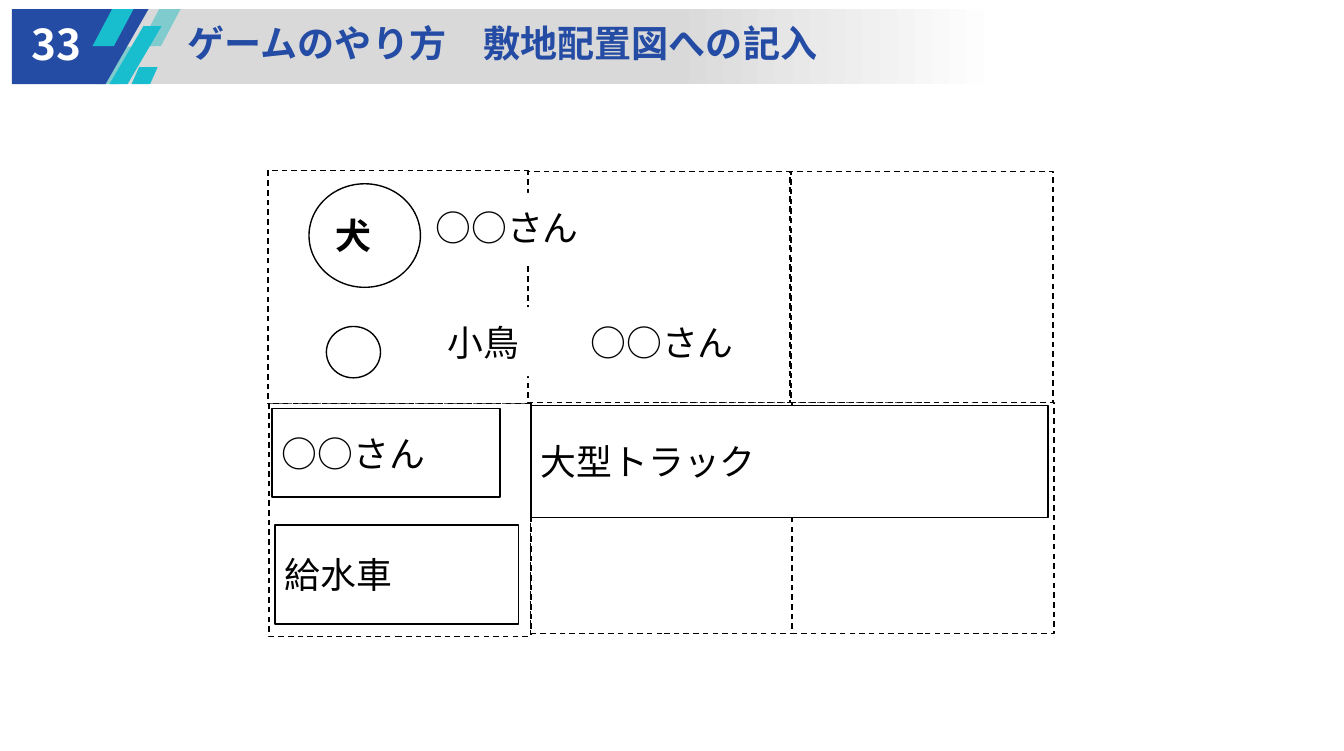
from dataclasses import dataclass
from typing import Any, Optional

from lxml import etree
from pptx import Presentation
from pptx import util as u
from pptx.dml import color as dml_color
from pptx.enum import dml, shapes, text
from pptx.oxml import ns

COLORS = {
    "white": "FFFFFF",
    "black": "000000",
    "grey": "D9D9D9",
    "navy": "254CA4",
    "cyan": "18BDCE",
    "pale_cyan": "80CBCD",
}
CJK_FONT = "Noto Sans CJK JP"
KIND = shapes.MSO_SHAPE
LABEL_FONT = {"name": "Arial", "size": u.Pt(25.7), "bold": False}
DOG_FONT = {**LABEL_FONT, "bold": True}
TITLE_FONT = {"name": CJK_FONT, "size": u.Pt(26.6), "bold": True}
NUMBER_FONT = {"name": CJK_FONT, "size": u.Pt(30.4), "bold": True}
BAND_STOPS = [(1, "grey"), (50, "grey"), (75, "white"), (100, "white")]


@dataclass(frozen=True)
class Box:
    left: float
    top: float
    width: float
    height: float

    def lengths(self) -> list[u.Cm]:
        return [u.Cm(v) for v in (self.left, self.top, self.width, self.height)]


@dataclass(frozen=True)
class Stripe:
    box: Box
    slant: float
    color: str


@dataclass(frozen=True)
class Item:
    box: Box
    words: str = ""
    kind: Any = KIND.RECTANGLE
    outlined: bool = True
    font: Optional[dict] = None


BAND = Box(0.3, 0.23, 33.38, 1.9)
BADGE_OUTLINE = [(0.3, 0.23), (2.67, 0.23), (3.76, 0.23), (2.67, 2.13), (0.3, 2.13)]
BACK_STRIPE = Stripe(Box(2.44, 1.19, 1.04, 0.94), 0.53, "pale_cyan")
FRONT_STRIPES = [
    Stripe(Box(2.34, 0.23, 1.04, 0.94), 0.53, "cyan"),
    Stripe(Box(3.33, 1.7, 0.66, 0.43), 0.442, "cyan"),
    Stripe(Box(3.53, 0.23, 1.04, 0.94), 0.53, "pale_cyan"),
    Stripe(Box(2.77, 0.66, 1.32, 1.47), 0.653, "cyan"),
]
PLOTS = [
    Box(6.78, 4.32, 6.63, 5.89),
    Box(6.81, 10.21, 6.63, 5.89),
    Box(13.44, 10.19, 6.63, 5.84),
    Box(13.36, 4.34, 6.63, 5.84),
    Box(20.04, 10.19, 6.63, 5.84),
    Box(20.02, 4.34, 6.63, 5.84),
]
ITEMS = [
    Item(Box(7.82, 4.65, 2.82, 2.62), "犬", KIND.OVAL, font=DOG_FONT),
    Item(Box(10.77, 4.88, 5.18, 1.75), "○○さん", outlined=False),
    Item(Box(8.26, 8.26, 1.37, 1.3), kind=KIND.OVAL),
    Item(Box(11.07, 7.77, 8.84, 1.75), "小鳥　　○○さん", outlined=False),
    Item(Box(6.88, 10.34, 5.77, 2.24), "○○さん"),
    Item(Box(6.96, 13.28, 6.17, 2.51), "給水車"),
    Item(Box(13.44, 10.26, 13.08, 2.84), "大型トラック"),
]


def rgb(color: str) -> dml_color.RGBColor:
    return dml_color.RGBColor.from_string(COLORS[color])


def paint(shape: Any, color: str) -> None:
    shape.shadow.inherit = False
    shape.fill.solid()
    shape.fill.fore_color.rgb = rgb(color)
    shape.line.fill.background()


def outline(shape: Any, dashed: bool = False) -> None:
    shape.line.color.rgb = rgb("black")
    shape.line.width = u.Pt(1)
    if dashed:
        shape.line.dash_style = dml.MSO_LINE.DASH


def add_block(slide: Any, kind: Any, box: Box, color: str) -> Any:
    shape = slide.shapes.add_shape(kind, *box.lengths())
    paint(shape, color)
    return shape


def write(shape: Any, words: str, font: dict, color: str, align: Any) -> Any:
    frame = shape.text_frame
    frame.word_wrap = True
    paragraph = frame.paragraphs[0]
    paragraph.alignment = align
    run = paragraph.add_run()
    run.text = words
    for key, value in font.items():
        setattr(run.font, key, value)
    run.font.color.rgb = rgb(color)
    etree.SubElement(run.font._element, ns.qn("a:ea"), typeface=CJK_FONT)
    return frame


def add_heading(slide: Any, box: Box, words: str, font: dict, color: str,
                align: Any, anchor: Any) -> None:
    heading = slide.shapes.add_textbox(*box.lengths())
    frame = write(heading, words, font, color, align)
    layout = {"margin_left": 0, "margin_top": 0, "margin_right": 0,
              "margin_bottom": 0, "vertical_anchor": anchor}
    for key, value in layout.items():
        setattr(frame, key, value)
    frame.paragraphs[0].line_spacing = 0.9


def add_band(slide: Any) -> None:
    band = add_block(slide, KIND.RECTANGLE, BAND, "grey")
    band.fill.gradient()
    band.fill.gradient_angle = 0
    stops = band._element.spPr.find(".//" + ns.qn("a:gsLst"))
    for stop in list(stops):
        stops.remove(stop)
    for percent, color in BAND_STOPS:
        stop = etree.SubElement(stops, ns.qn("a:gs"), pos=str(percent * 1000))
        etree.SubElement(stop, ns.qn("a:srgbClr"), val=COLORS[color])


def add_stripe(slide: Any, stripe: Stripe) -> None:
    shape = add_block(slide, KIND.PARALLELOGRAM, stripe.box, stripe.color)
    shape.adjustments[0] = stripe.slant


def add_badge(slide: Any) -> None:
    start, *rest = [(u.Cm(x), u.Cm(y)) for x, y in BADGE_OUTLINE]
    builder = slide.shapes.build_freeform(*start)
    builder.add_line_segments(rest, close=True)
    paint(builder.convert_to_shape(), "navy")


def add_item(slide: Any, item: Item) -> None:
    shape = add_block(slide, item.kind, item.box, "white")
    if item.outlined:
        outline(shape)
    if item.words:
        frame = write(shape, item.words, item.font or LABEL_FONT, "black",
                      text.PP_ALIGN.LEFT)
        frame.vertical_anchor = text.MSO_ANCHOR.MIDDLE


def main() -> None:
    deck = Presentation()
    deck.slide_width, deck.slide_height = u.Cm(34.01), u.Cm(19)
    slide = deck.slides.add_slide(deck.slide_layouts[6])

    add_band(slide)
    add_stripe(slide, BACK_STRIPE)
    add_badge(slide)
    for stripe in FRONT_STRIPES:
        add_stripe(slide, stripe)
    add_heading(slide, Box(4.75, 0.64, 17.78, 1.04), "ゲームのやり方　敷地配置図への記入",
                TITLE_FONT, "navy", text.PP_ALIGN.LEFT, text.MSO_ANCHOR.TOP)
    add_heading(slide, Box(0.61, 0.53, 1.65, 1.32), "33",
                NUMBER_FONT, "white", text.PP_ALIGN.CENTER, text.MSO_ANCHOR.MIDDLE)

    for plot in PLOTS:
        outline(add_block(slide, KIND.RECTANGLE, plot, "white"), dashed=True)
    for item in ITEMS:
        add_item(slide, item)
    deck.save("out.pptx")


if __name__ == "__main__":
    main()
